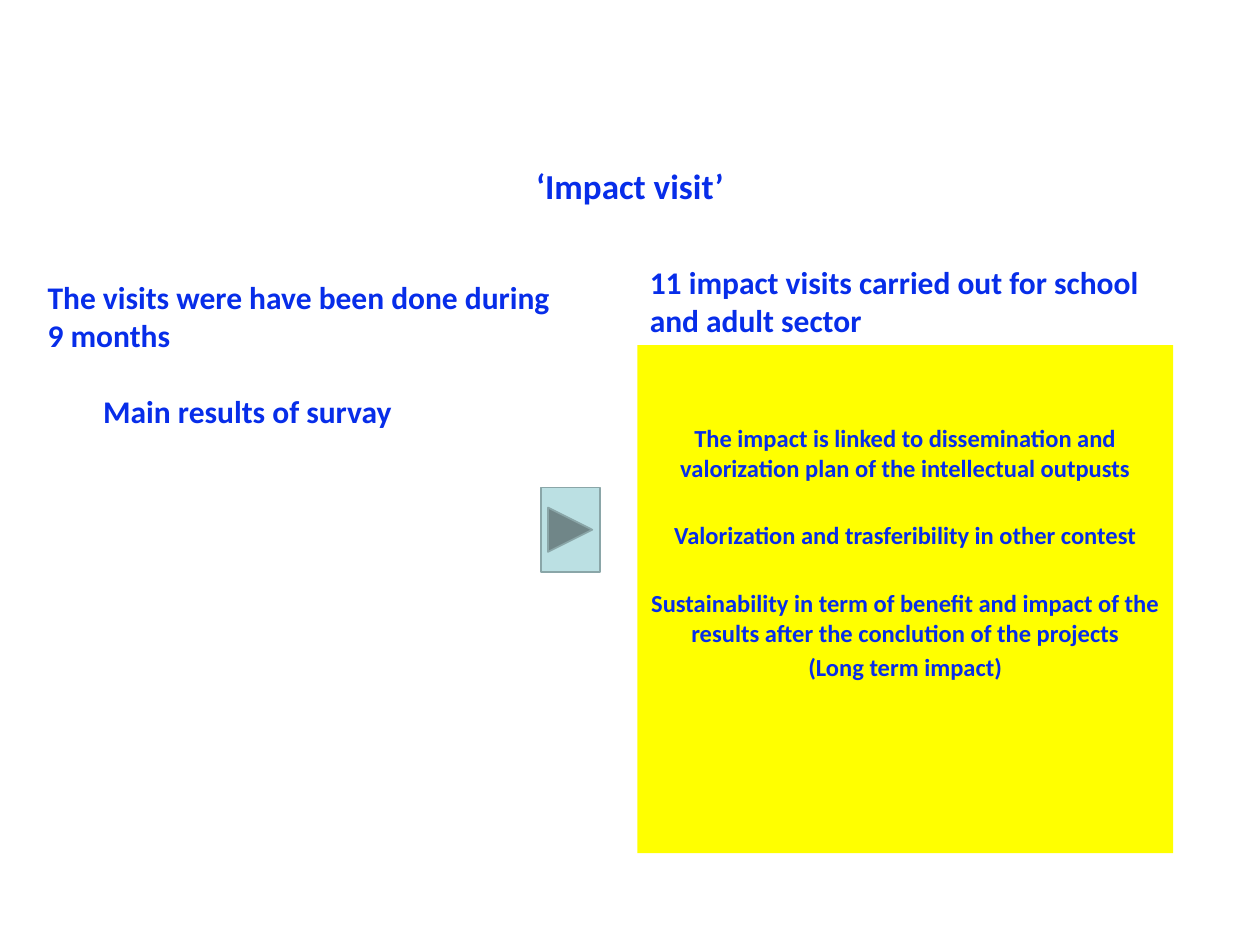
from dataclasses import dataclass

from pptx import Presentation
from pptx.dml.color import RGBColor
from pptx.enum.shapes import MSO_SHAPE
from pptx.enum.text import MSO_ANCHOR, PP_ALIGN
from pptx.util import Cm, Pt


@dataclass(frozen=True)
class Theme:
    font: str = "Calibri"
    text: RGBColor = RGBColor(0x07, 0x2D, 0xE9)
    panel: RGBColor = RGBColor(0xFF, 0xFF, 0x00)
    button: RGBColor = RGBColor(0xBB, 0xE0, 0xE3)
    button_line: RGBColor = RGBColor(0x8A, 0xA6, 0xA8)
    title_size: int = 20
    heading_size: int = 18
    body_size: int = 14


@dataclass(frozen=True)
class Box:
    """A region in centimetres."""
    left: float
    top: float
    width: float
    height: float

    def lengths(self):
        return Cm(self.left), Cm(self.top), Cm(self.width), Cm(self.height)


THEME = Theme()
PARAGRAPH_GAP = 22
CONTINUATION_GAP = 3


def write(shape, entries, size, align=PP_ALIGN.CENTER, anchor=MSO_ANCHOR.TOP,
          top=0.13, bottom=0.13):
    """Fill a shape with (text, space before) entries in the bold theme font."""
    frame = shape.text_frame
    frame.word_wrap = True
    frame.vertical_anchor = anchor
    frame.margin_top, frame.margin_bottom = Cm(top), Cm(bottom)
    frame.text = "\n".join(text for text, _ in entries)
    for para, (_, gap) in zip(frame.paragraphs, entries):
        para.alignment = align
        para.space_before = Pt(gap)
        for span in para.runs:
            span.font.name = THEME.font
            span.font.size = Pt(size)
            span.font.bold = True
            span.font.color.rgb = THEME.text


def add_title(page, box):
    write(page.shapes.add_textbox(*box.lengths()), [("‘Impact visit’", 0)],
          THEME.title_size, anchor=MSO_ANCHOR.BOTTOM, bottom=0.54)


def add_heading(page, box, text, bottom=0.13):
    write(page.shapes.add_textbox(*box.lengths()), [(text, 0)],
          THEME.heading_size, PP_ALIGN.LEFT, MSO_ANCHOR.BOTTOM, bottom=bottom)


def add_survey_label(page, box):
    write(page.shapes.add_textbox(*box.lengths()),
          [("Main results of survay", 0)], THEME.heading_size, top=1.72)


def add_results_panel(page, box):
    panel = page.shapes.add_shape(MSO_SHAPE.RECTANGLE, *box.lengths())
    panel.shadow.inherit = False
    panel.fill.solid()
    panel.fill.fore_color.rgb = THEME.panel
    panel.line.fill.background()
    write(panel, [
        ("The impact is linked to dissemination and valorization plan "
         "of the intellectual outpusts", 0),
        ("Valorization and trasferibility in other contest", PARAGRAPH_GAP),
        ("Sustainability in term of benefit and impact of the results "
         "after the conclution of the projects", PARAGRAPH_GAP),
        ("(Long term impact)", CONTINUATION_GAP),
    ], THEME.body_size, top=1.57)


def add_forward_button(page, box):
    button = page.shapes.add_shape(
        MSO_SHAPE.ACTION_BUTTON_FORWARD_OR_NEXT, *box.lengths())
    button.shadow.inherit = False
    button.fill.solid()
    button.fill.fore_color.rgb = THEME.button
    button.line.color.rgb = THEME.button_line
    button.line.width = Pt(1)


def main():
    deck = Presentation()
    deck.slide_width, deck.slide_height = Cm(25.4), Cm(19.05)
    page = deck.slides.add_slide(deck.slide_layouts[6])

    add_title(page, Box(1.75, 1.02, 21.9, 3.68))
    add_heading(page, Box(0.71, 4.52, 10.74, 3.48),
                "The visits were have been done during 9 months", bottom=0.87)
    add_survey_label(page, Box(0.71, 6.73, 8.56, 7.59))
    add_heading(page, Box(12.85, 4.67, 10.8, 2.29),
                "11 impact visits carried out for school and adult sector")
    add_results_panel(page, Box(12.85, 6.96, 10.8, 10.24))
    add_forward_button(page, Box(10.9, 9.83, 1.19, 1.7))

    deck.save("out.pptx")


if __name__ == "__main__":
    main()
